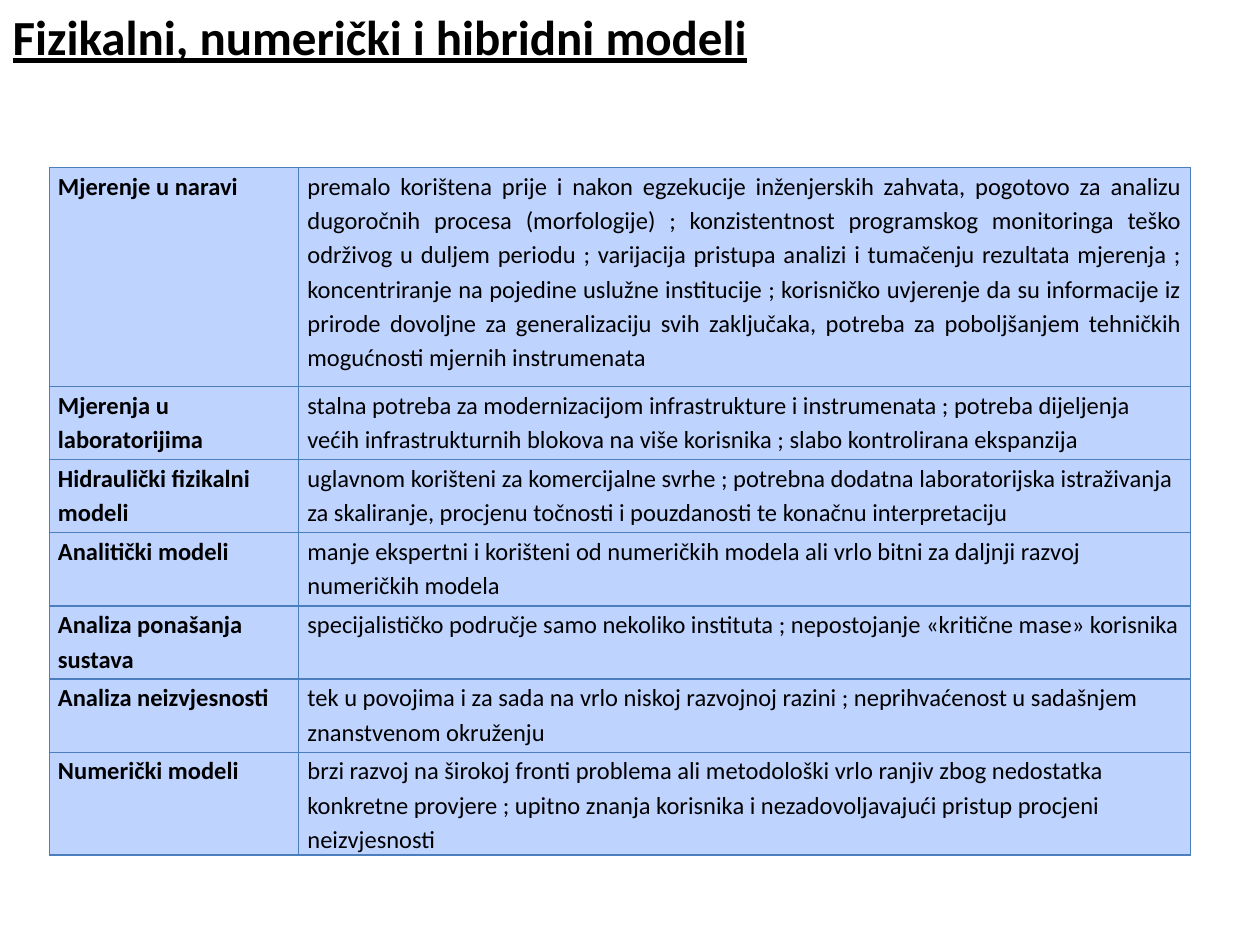
from dataclasses import dataclass

from lxml import etree
from pptx import Presentation
from pptx.dml.color import RGBColor
from pptx.enum.text import MSO_ANCHOR, MSO_AUTO_SIZE, PP_ALIGN
from pptx.oxml.ns import qn
from pptx.util import Inches, Pt

LEFT, JUSTIFY = PP_ALIGN.LEFT, PP_ALIGN.JUSTIFY
TOP = MSO_ANCHOR.TOP
NO_FIT = MSO_AUTO_SIZE.NONE
TITLE_ONLY = 5


@dataclass(frozen=True)
class Theme:
    font: str = "Calibri"
    ink: str = "000000"
    fill: str = "BFD3FF"
    line: str = "4B7EBC"
    border: float = 0.75
    title: int = 28
    body: int = 14
    spacing: float = 1.15


THEME = Theme()
COLS = [1.98, 7.08]
TALL, ROW = 1.74, 0.58

TITLE = "Fizikalni, numerički i hibridni modeli"
ROWS = [
    ("Mjerenje u naravi",
     "premalo korištena prije i nakon egzekucije inženjerskih zahvata, pogotovo "
     "za analizu dugoročnih procesa (morfologije) ; konzistentnost programskog "
     "monitoringa teško održivog u duljem periodu ; varijacija pristupa analizi i "
     "tumačenju rezultata mjerenja ; koncentriranje na pojedine uslužne "
     "institucije ; korisničko uvjerenje da su informacije iz prirode dovoljne za "
     "generalizaciju svih zaključaka, potreba za poboljšanjem tehničkih "
     "mogućnosti mjernih instrumenata"),
    ("Mjerenja u laboratorijima",
     "stalna potreba za modernizacijom infrastrukture i instrumenata ; potreba "
     "dijeljenja većih infrastrukturnih blokova na više korisnika ; slabo "
     "kontrolirana ekspanzija"),
    ("Hidraulički fizikalni modeli",
     "uglavnom korišteni za komercijalne svrhe ; potrebna dodatna laboratorijska "
     "istraživanja za skaliranje, procjenu točnosti i pouzdanosti te konačnu "
     "interpretaciju"),
    ("Analitički modeli",
     "manje ekspertni i korišteni od numeričkih modela ali vrlo bitni za daljnji "
     "razvoj numeričkih modela"),
    ("Analiza ponašanja sustava",
     "specijalističko područje samo nekoliko instituta ; nepostojanje «kritične "
     "mase» korisnika"),
    ("Analiza neizvjesnosti",
     "tek u povojima i za sada na vrlo niskoj razvojnoj razini ; neprihvaćenost u "
     "sadašnjem znanstvenom okruženju"),
    ("Numerički modeli",
     "brzi razvoj na širokoj fronti problema ali metodološki vrlo ranjiv zbog "
     "nedostatka konkretne provjere ; upitno znanja korisnika i nezadovoljavajući "
     "pristup procjeni neizvjesnosti"),
]


def set_font(para, size, bold):
    font = para.font
    font.name, font.size, font.bold = THEME.font, Pt(size), bold
    font.color.rgb = RGBColor.from_string(THEME.ink)


def add_title(slide, text):
    title = slide.shapes.title
    title.left = title.top = 0
    title.width, title.height = Inches(9.57), Inches(0.57)
    frame = title.text_frame
    frame.text = text
    frame.word_wrap = True
    frame.auto_size = NO_FIT
    frame.vertical_anchor = TOP
    para = frame.paragraphs[0]
    para.alignment = LEFT
    set_font(para, THEME.title, True)
    para.font.underline = True


def add_border(cell):
    """Draw all four sides; call before the fill, which must follow in the XML."""
    props = cell._tc.get_or_add_tcPr()
    for side in ("lnL", "lnR", "lnT", "lnB"):
        line = etree.SubElement(props, qn(f"a:{side}"), w=str(Pt(THEME.border)))
        fill = etree.SubElement(line, qn("a:solidFill"))
        etree.SubElement(fill, qn("a:srgbClr"), val=THEME.line)


def fill_cell(cell, text, bold, align):
    add_border(cell)
    cell.fill.solid()
    cell.fill.fore_color.rgb = RGBColor.from_string(THEME.fill)
    cell.margin_left = cell.margin_right = Inches(0.07)
    cell.margin_top = cell.margin_bottom = 0
    cell.text = text
    para = cell.text_frame.paragraphs[0]
    para.alignment = align
    para.line_spacing = THEME.spacing
    set_font(para, THEME.body, bold)


def add_grid(slide, rows):
    heights = [TALL] + [ROW] * (len(rows) - 1)
    frame = slide.shapes.add_table(
        len(rows), len(COLS), Inches(0.39), Inches(1.33),
        Inches(sum(COLS)), Inches(sum(heights)))
    table = frame.table
    table.first_row = table.horz_banding = False
    for col, width in zip(table.columns, COLS):
        col.width = Inches(width)
    for i, (name, note) in enumerate(rows):
        table.rows[i].height = Inches(heights[i])
        fill_cell(table.cell(i, 0), name, True, LEFT)
        fill_cell(table.cell(i, 1), note, False, LEFT if i else JUSTIFY)


def main():
    deck = Presentation()
    deck.slide_width, deck.slide_height = Inches(10), Inches(7.5)
    slide = deck.slides.add_slide(deck.slide_layouts[TITLE_ONLY])
    add_title(slide, TITLE)
    add_grid(slide, ROWS)
    deck.save("out.pptx")


if __name__ == "__main__":
    main()
